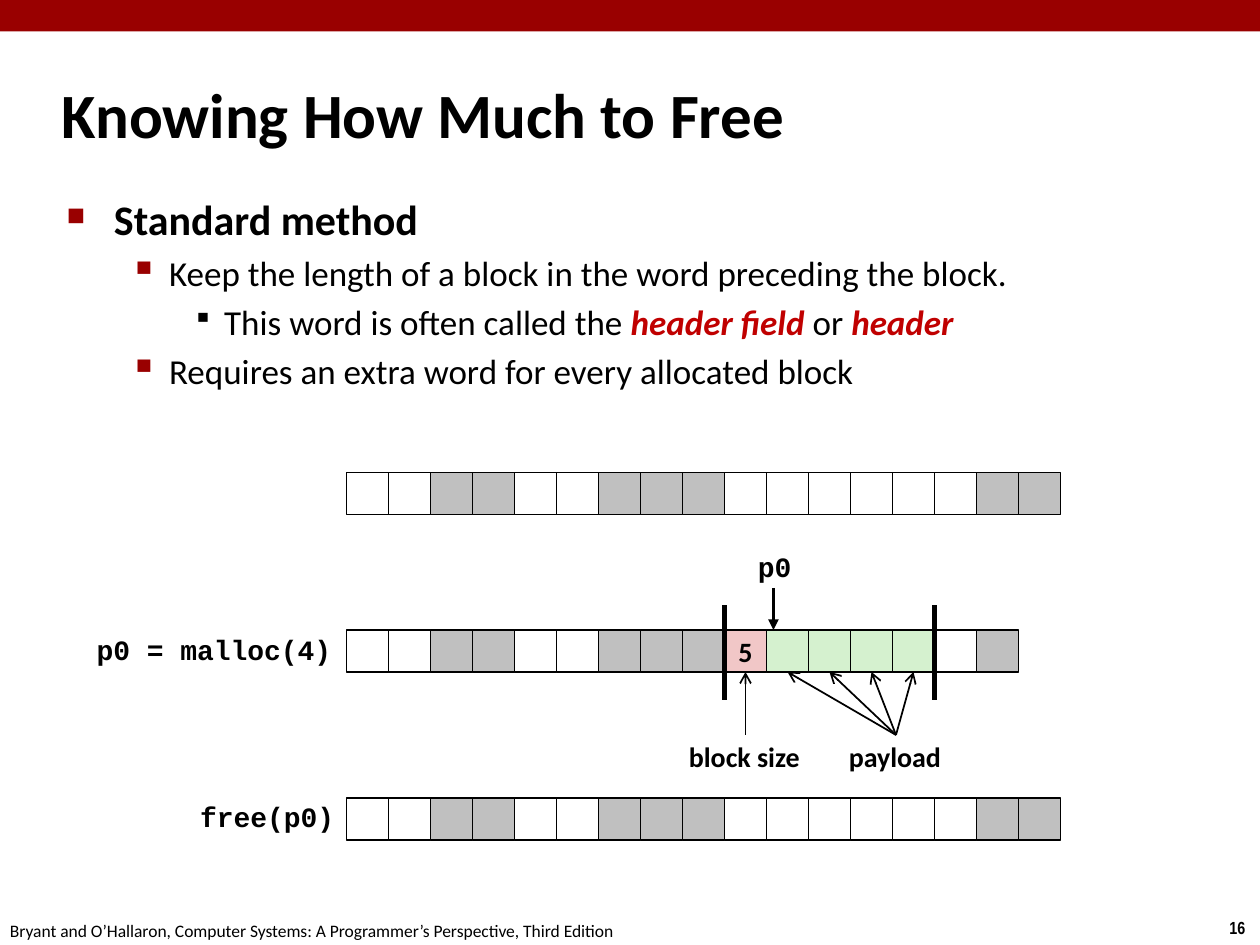
from lxml.etree import SubElement
from pptx import Presentation
from pptx.dml.color import RGBColor
from pptx.enum.shapes import MSO_CONNECTOR, MSO_SHAPE
from pptx.enum.text import MSO_ANCHOR, MSO_AUTO_SIZE, PP_ALIGN
from pptx.oxml.ns import qn
from pptx.util import Pt

COLORS = {"black": "000000", "banner": "990000", "term": "C00000", "free": "FFFFFF",
          "allocated": "C0C0C0", "header": "F1C7C7", "payload": "D5F1CF"}
CELL_KINDS = {"f": "free", "a": "allocated", "h": "header", "p": "payload"}
CELL = 24
HEAP = "ffaaffaaaffffffaa"
HEAP_AFTER_MALLOC = "ffaaffaaahppppfa"
HEADER_INDEX = HEAP_AFTER_MALLOC.index("h")
PAYLOAD_COUNT = HEAP_AFTER_MALLOC.count("p")
CODE = {"name": "Courier New", "size": Pt(16), "bold": True}
LABEL = {"name": "Calibri", "size": Pt(16), "bold": True}
TITLE = {"name": "Calibri", "size": Pt(36), "bold": True}
FOOTER = {"name": "Calibri", "size": Pt(10), "bold": False}
PAGE = {"name": "Arial Narrow", "size": Pt(10), "bold": True}
LEVELS = [
    {"size": 24, "bold": True, "margin": 27, "hang": 27, "space": 4.8,
     "bullet": "■", "scale": 60, "color": "banner"},
    {"size": 20, "bold": False, "margin": 58.5, "hang": 22.5, "space": 4,
     "bullet": "▪", "scale": 110, "color": "banner"},
    {"size": 20, "bold": False, "margin": 90, "hang": 18, "space": 4,
     "bullet": "▪", "scale": 80, "color": "black"},
]
POINTS = [
    (0, [("Standard method", False)]),
    (1, [("Keep the length of a block in the word preceding the block.", False)]),
    (2, [("This word is often called the ", False), ("header field ", True),
         ("or ", False), ("header", True)]),
    (1, [("Requires an extra word for every allocated block", False)]),
]


def rgb(key):
    """Return the named colour."""
    return RGBColor.from_string(COLORS[key])


def style(font, values, color="black"):
    """Apply a dict of format values and a colour to a font."""
    for attribute, value in values.items():
        setattr(font, attribute, value)
    font.color.rgb = rgb(color)


def add_label(slide, box, text, values, spacing=1.0):
    """Add one line of text that does not wrap."""
    frame = slide.shapes.add_textbox(*map(Pt, box)).text_frame
    frame.word_wrap = False
    frame.auto_size = MSO_AUTO_SIZE.SHAPE_TO_FIT_TEXT
    line = frame.paragraphs[0]
    line.line_spacing = spacing
    run = line.add_run()
    run.text = text
    style(run.font, values)


def add_rect(slide, box, fill, outlined=True):
    """Add a flat rectangle, with a thin black outline if wanted."""
    rect = slide.shapes.add_shape(MSO_SHAPE.RECTANGLE, *map(Pt, box))
    rect.shadow.inherit = False
    rect.fill.solid()
    rect.fill.fore_color.rgb = rgb(fill)
    if outlined:
        rect.line.color.rgb = rgb("black")
        rect.line.width = Pt(1)
    else:
        rect.line.fill.background()
    return rect


def add_line(slide, start, end, width, arrowhead=None):
    """Add a straight black line, with an arrowhead at its end if wanted."""
    line = slide.shapes.add_connector(MSO_CONNECTOR.STRAIGHT, *map(Pt, start + end))
    line.line.color.rgb = rgb("black")
    line.line.width = Pt(width)
    if arrowhead:
        SubElement(line.line._get_or_add_ln(), qn("a:tailEnd"), type=arrowhead)
    SubElement(line._element.spPr, qn("a:effectLst"))


def add_title(slide, box):
    """Move and format the title placeholder."""
    title = slide.shapes.title
    title.left, title.top, title.width, title.height = map(Pt, box)
    frame = title.text_frame
    frame.vertical_anchor = MSO_ANCHOR.MIDDLE
    heading = frame.paragraphs[0]
    heading.alignment = PP_ALIGN.LEFT
    run = heading.add_run()
    run.text = "Knowing How Much to Free"
    style(run.font, TITLE)


def add_bullet(paragraph, level):
    """Give a paragraph the indent and bullet of its level."""
    properties = paragraph._p.get_or_add_pPr()
    properties.set("marL", str(Pt(level["margin"])))
    properties.set("indent", str(-Pt(level["hang"])))
    color = SubElement(properties, qn("a:buClr"))
    SubElement(color, qn("a:srgbClr"), val=COLORS[level["color"]])
    SubElement(properties, qn("a:buSzPct"), val=str(level["scale"] * 1000))
    SubElement(properties, qn("a:buChar"), char=level["bullet"])


def add_points(slide, box):
    """Write the bulleted points."""
    frame = slide.shapes.add_textbox(*map(Pt, box)).text_frame
    frame.word_wrap = True
    for index, (depth, parts) in enumerate(POINTS):
        point = frame.add_paragraph() if index else frame.paragraphs[0]
        level = LEVELS[depth]
        point.level = depth
        point.space_before = Pt(level["space"])
        add_bullet(point, level)
        for text, is_term in parts:
            run = point.add_run()
            run.text = text
            style(run.font, {"name": "Calibri", "size": Pt(level["size"]),
                             "bold": is_term or level["bold"], "italic": is_term},
                  "term" if is_term else "black")


def add_heap(slide, left, top, words):
    """Draw a row of heap words and return its cells."""
    return [add_rect(slide, (left + i * CELL, top, CELL, CELL), CELL_KINDS[word])
            for i, word in enumerate(words)]


def add_malloc(slide, left, top):
    """Draw the heap after malloc with its block size, payload and pointer."""
    cells = add_heap(slide, left, top, HEAP_AFTER_MALLOC)
    block_left = left + HEADER_INDEX * CELL
    block_right = block_left + (1 + PAYLOAD_COUNT) * CELL
    bottom = top + CELL
    label_top = bottom + 36

    frame = cells[HEADER_INDEX].text_frame
    frame.word_wrap = False
    frame.vertical_anchor = MSO_ANCHOR.MIDDLE
    size = frame.paragraphs[0]
    size.alignment = PP_ALIGN.CENTER
    run = size.add_run()
    run.text = str(1 + PAYLOAD_COUNT)
    style(run.font, LABEL)

    for edge in (block_left, block_right):
        add_line(slide, (edge, top - 14), (edge, top + 40), 3)

    add_label(slide, (48.2, top - 0.5, 150.5, 26), "p0 = malloc(4)", CODE, 0.94)
    add_label(slide, (block_left + 12, top - 48, 34, 25), "p0", CODE, 0.94)
    add_line(slide, (block_left + 28, top - 24), (block_left + 28, top), 2, "triangle")

    add_label(slide, (block_left - 27.4, label_top, 78.5, 26.6), "block size", LABEL, 0.98)
    add_label(slide, (block_left + 64, label_top, 67.7, 26.6), "payload", LABEL, 0.98)
    middle = block_left + CELL / 2
    add_line(slide, (middle, label_top), (middle, bottom), 1, "arrow")
    for i in range(1, 1 + PAYLOAD_COUNT):
        add_line(slide, (block_left + 98, label_top), (middle + i * CELL, bottom), 1, "arrow")


def add_free(slide, left, top):
    """Draw the heap after free with its call."""
    add_label(slide, (107.3, top - 1, 92.2, 26), "free(p0)", CODE, 0.94)
    add_heap(slide, left, top, HEAP)


def add_frame(slide, width):
    """Draw the banner, page number and source line."""
    add_rect(slide, (0, 0, width, 18), "banner", outlined=False)
    add_label(slide, (695.5, 520.5, 24.5, 19.4), "16", PAGE)
    add_label(slide, (-1.4, 522, 365.8, 19.4),
              "Bryant and O’Hallaron, Computer Systems: A Programmer’s Perspective, Third Edition",
              FOOTER)


def main():
    """Build and save the slide."""
    deck = Presentation()
    deck.slide_width, deck.slide_height = Pt(720), Pt(540)
    slide = deck.slides.add_slide(deck.slide_layouts[5])
    add_frame(slide, 720)
    add_title(slide, (28, 34.5, 598, 60))
    add_points(slide, (31, 107.3, 622, 130))
    add_heap(slide, 198, 270, HEAP)
    add_malloc(slide, 198, 360)
    add_free(slide, 198, 456)
    deck.save("out.pptx")


if __name__ == "__main__":
    main()
